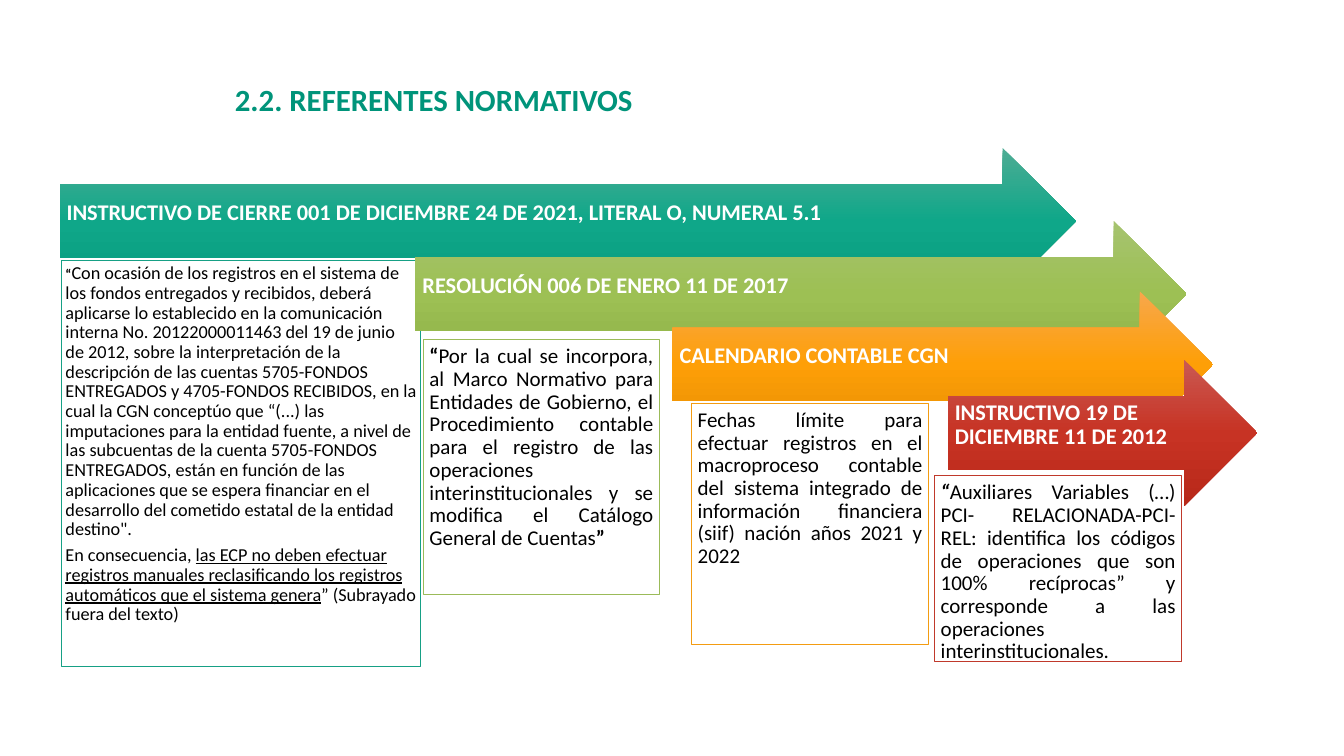
from copy import deepcopy
from dataclasses import dataclass

from pptx import Presentation
from pptx.dml.color import RGBColor
from pptx.enum.shapes import MSO_SHAPE
from pptx.enum.text import MSO_ANCHOR, MSO_AUTO_SIZE, PP_ALIGN
from pptx.oxml.ns import qn
from pptx.util import Inches, Pt


@dataclass(frozen=True)
class Theme:
    font: str = "Calibri"
    title: str = "00947A"
    ink: str = "000000"
    paper: str = "FFFFFF"
    title_size: int = 22
    head_size: int = 16
    body_size: int = 15
    small_size: int = 13
    quote_size: int = 10


THEME = Theme()
ARROW_H = 1.45

# Each step: arrow (left, top, width), heading, gradient, panel box, edge,
# text size, inset, alignment, paragraphs of (text, marks) runs.
# Marks: b bold, i italic, u underlined, s small quote mark
STEPS = [
    ((0.59, 1.47, 10.08),
     "INSTRUCTIVO DE CIERRE 001 DE DICIEMBRE 24 DE 2021, LITERAL O, NUMERAL 5.1",
     ("4DAC94", "0FA789", "079A7E"),
     (0.61, 2.58, 3.56, 4.03), "16A085", THEME.small_size, 0.04, PP_ALIGN.LEFT,
     [[("“", "bs"),
       ("Con ocasión de los registros en el sistema de los fondos entregados y "
        "recibidos, deberá aplicarse lo establecido en la comunicación interna "
        "No. 20122000011463 del 19 de junio de 2012, sobre la interpretación de "
        "la descripción de las cuentas 5705-FONDOS ENTREGADOS y 4705-FONDOS "
        "RECIBIDOS, en la cual la CGN conceptúo que “(...) las imputaciones para "
        "la entidad fuente, a nivel de las subcuentas de la cuenta 5705-FONDOS "
        "ENTREGADOS, están en función de las aplicaciones que se espera financiar "
        "en el desarrollo del cometido estatal de la entidad destino\".", "")],
      [("En consecuencia, ", ""),
       ("las ECP no deben efectuar registros manuales reclasificando los "
        "registros automáticos que el sistema genera", "u"),
       ("” (Subrayado fuera del texto)", "")]]),
    ((4.12, 2.19, 7.65), "RESOLUCIÓN 006 DE ENERO 11 DE 2017",
     ("A6C36F", "9DC054", "8DB045"),
     (4.2, 3.37, 2.34, 2.53), "9BBB59", THEME.body_size, 0.06, PP_ALIGN.JUSTIFY,
     [[("“", "b"),
       ("Por la cual se incorpora, al Marco Normativo para Entidades de Gobierno, "
        "el Procedimiento contable para el registro de las operaciones "
        "interinstitucionales y se modifica el Catálogo General de Cuentas", ""),
       ("”", "b")]]),
    ((6.67, 2.89, 5.36), "CALENDARIO CONTABLE CGN",
     ("F7A74C", "FE9F07", "E58E03"),
     (6.86, 4, 2.35, 2.39), "F39C12", THEME.body_size, 0.06, PP_ALIGN.JUSTIFY,
     [[("Fechas límite para efectuar registros en el macroproceso contable del "
        "sistema integrado de información financiera (siif) nación años 2021 y "
        "2022", "")]]),
    ((9.4, 3.57, 3.07), "INSTRUCTIVO 19 DE DICIEMBRE 11 DE 2012",
     ("CA5952", "C73324", "B82819"),
     (9.27, 4.72, 2.45, 1.84), "C0392B", THEME.body_size, 0.06, PP_ALIGN.JUSTIFY,
     [[("“", "bi"),
       ("Auxiliares Variables (…) PCI- RELACIONADA-PCI-REL: identifica los "
        "códigos de operaciones que son 100% recíprocas” y corresponde a las "
        "operaciones interinstitucionales.", "")]]),
]


def color(code):
    return RGBColor.from_string(code)


def style(para, size, ink, bold=False, align=PP_ALIGN.LEFT):
    para.alignment = align
    para.line_spacing = 0.9
    para.space_after = Pt(round(size * 0.35, 1))
    font = para.font
    font.name, font.size, font.bold = THEME.font, Pt(size), bold
    font.color.rgb = color(ink)


def set_frame(frame, anchor, insets):
    frame.word_wrap = True
    frame.auto_size = MSO_AUTO_SIZE.NONE
    frame.vertical_anchor = anchor
    (frame.margin_left, frame.margin_top,
     frame.margin_right, frame.margin_bottom) = map(Inches, insets)


def add_block(slide, kind, box):
    shape = slide.shapes.add_shape(kind, *map(Inches, box))
    shape.shadow.inherit = False
    return shape


def shade(shape, codes):
    """Fill from top to bottom with evenly spaced colours."""
    fill = shape.fill
    fill.gradient()
    fill.gradient_angle = 270
    stops = shape._element.spPr.find(qn("a:gradFill")).find(qn("a:gsLst"))
    stops.insert(1, deepcopy(stops[0]))
    for i, (stop, code) in enumerate(zip(fill.gradient_stops, codes)):
        stop.position = i / (len(codes) - 1)
        stop.color.rgb = color(code)


def add_title(slide, text):
    title = slide.shapes.title
    title.left, title.top, title.width, title.height = map(
        Inches, (2.23, 0.34, 8.34, 1.34))
    set_frame(title.text_frame, MSO_ANCHOR.MIDDLE, (0.1, 0.05, 0.1, 0.05))
    title.text_frame.text = text
    style(title.text_frame.paragraphs[0], THEME.title_size, THEME.title, True)
    title.text_frame.paragraphs[0].space_after = Pt(0)


def add_arrow(slide, spot, text, codes):
    arrow = add_block(slide, MSO_SHAPE.RIGHT_ARROW, (*spot, ARROW_H))
    shade(arrow, codes)
    arrow.line.fill.background()
    set_frame(arrow.text_frame, MSO_ANCHOR.MIDDLE, (0.07, 0.07, 0.28, 0.23))
    arrow.text_frame.text = text
    style(arrow.text_frame.paragraphs[0], THEME.head_size, THEME.paper, True)


def add_run(para, text, marks):
    run = para.add_run()
    run.text = text
    if "b" in marks:
        run.font.bold = True
    if "i" in marks:
        run.font.italic = True
    if "u" in marks:
        run.font.underline = True
    if "s" in marks:
        run.font.size = Pt(THEME.quote_size)


def add_panel(slide, box, edge, size, inset, align, paras):
    panel = add_block(slide, MSO_SHAPE.RECTANGLE, box)
    panel.fill.solid()
    panel.fill.fore_color.rgb = color(THEME.paper)
    panel.line.color.rgb = color(edge)
    panel.line.width = Pt(0.5)
    frame = panel.text_frame
    set_frame(frame, MSO_ANCHOR.TOP, [inset] * 4)
    for i, runs in enumerate(paras):
        para = frame.add_paragraph() if i else frame.paragraphs[0]
        style(para, size, THEME.ink, align=align)
        for text, marks in runs:
            add_run(para, text, marks)


def main():
    deck = Presentation()
    deck.slide_width, deck.slide_height = Inches(13.33), Inches(7.5)
    slide = deck.slides.add_slide(deck.slide_layouts[5])
    add_title(slide, "2.2. REFERENTES NORMATIVOS")

    # Cascade of arrows, each with its panel
    for spot, text, codes, *panel in STEPS:
        add_arrow(slide, spot, text, codes)
        add_panel(slide, *panel)

    deck.save("out.pptx")


if __name__ == "__main__":
    main()
